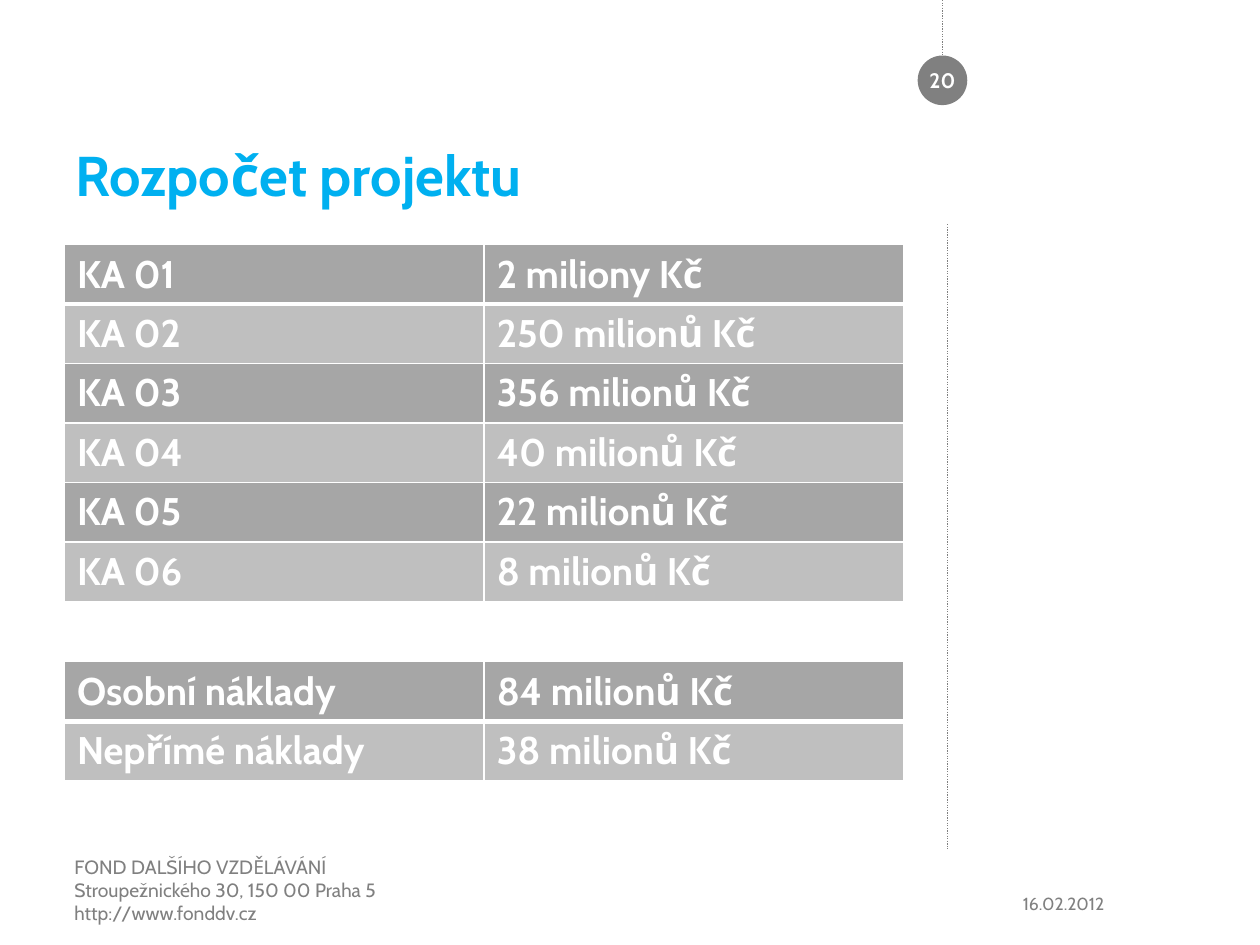
import pptx
import pptx.dml.color
import pptx.enum.dml
import pptx.enum.shapes
import pptx.enum.text
import pptx.oxml
import pptx.oxml.ns
import pptx.util
from pptx.util import Cm, Pt

FONT = "Cabin"
GREY, WHITE, BLUE = "808080", "FFFFFF", "00B0F0"
ROW_FILLS = ("A6A6A6", "BFBFBF")

TITLE = "Rozpočet projektu"
PAGE_NUMBER = "20"
DATE = "16.02.2012"
ADDRESS = [
    "FOND DALŠÍHO VZDĚLÁVÁNÍ",
    "Stroupežnického 30, 150 00 Praha 5",
    "http://www.fonddv.cz",
]
ACTIVITIES = [
    ("KA 01", "2 miliony Kč"),
    ("KA 02", "250 milionů Kč"),
    ("KA 03", "356 milionů Kč"),
    ("KA 04", "40 milionů Kč"),
    ("KA 05", "22 milionů Kč"),
    ("KA 06", "8 milionů Kč"),
]
OVERHEADS = [
    ("Osobní náklady", "84 milionů Kč"),
    ("Nepřímé náklady", "38 milionů Kč"),
]

TABLE_LEFT, COLUMN_WIDTH, ROW_HEIGHT = 1.3, 8.46, 1.2
BADGE_LEFT, BADGE_TOP, BADGE_SIZE = 18.5, 1.12, 1.0
MIDDLE = pptx.enum.text.MSO_ANCHOR.MIDDLE
BOTTOM = pptx.enum.text.MSO_ANCHOR.BOTTOM


def rgb(value):
    return pptx.dml.color.RGBColor.from_string(value)


def style(paragraph, size, color, bold=False):
    font = paragraph.font
    font.name, font.size, font.bold = FONT, Pt(size), bold
    font.color.rgb = rgb(color)


def add_text(slide, lines, box, size, color, bold=False, anchor=None):
    """Add a wrapped text box with one paragraph per line; box is in cm."""
    frame = slide.shapes.add_textbox(*map(Cm, box)).text_frame
    frame.word_wrap = True
    frame.vertical_anchor = anchor
    frame.text = "\n".join(lines)
    for paragraph in frame.paragraphs:
        style(paragraph, size, color, bold)


def add_dotted_line(slide, x, top, bottom):
    line = slide.shapes.add_connector(
        pptx.enum.shapes.MSO_CONNECTOR.STRAIGHT, Cm(x), Cm(top), Cm(x), Cm(bottom))
    line.line.color.rgb = rgb(GREY)
    line.line.width = Pt(0.75)
    line.line.dash_style = pptx.enum.dml.MSO_LINE.ROUND_DOT
    pptx.oxml.ns  # namespace helpers used below
    properties = line._element.spPr
    properties.append(pptx.oxml.parse_xml(
        f'<a:effectLst {pptx.oxml.ns.nsdecls("a")}/>'))


def add_borders(cell, top, bottom):
    """Draw white cell borders; top and bottom are widths in points."""
    for side, width in (("L", 1), ("R", 1), ("T", top), ("B", bottom)):
        cell._tc.get_or_add_tcPr().append(pptx.oxml.parse_xml(
            f'<a:ln{side} {pptx.oxml.ns.nsdecls("a")} w="{Pt(width)}"><a:solidFill>'
            f'<a:srgbClr val="{WHITE}"/></a:solidFill></a:ln{side}>'))


def add_budget(slide, rows, top):
    columns = len(rows[0])
    table = slide.shapes.add_table(
        len(rows), columns, Cm(TABLE_LEFT), Cm(top),
        Cm(COLUMN_WIDTH * columns), Cm(ROW_HEIGHT * len(rows))).table
    table.first_row = table.horz_banding = False
    for r, row in enumerate(rows):
        for c, text in enumerate(row):
            cell = table.cell(r, c)
            cell.text = text
            style(cell.text_frame.paragraphs[0], 22, WHITE, bold=True)
            add_borders(cell, top=3 if r == 1 else 1, bottom=3 if r == 0 else 1)
            cell.fill.solid()
            cell.fill.fore_color.rgb = rgb(ROW_FILLS[r % 2])


def add_page_badge(slide):
    badge = slide.shapes.add_shape(
        pptx.enum.shapes.MSO_SHAPE.OVAL,
        *map(Cm, (BADGE_LEFT, BADGE_TOP, BADGE_SIZE, BADGE_SIZE)))
    badge.shadow.inherit = False
    badge.fill.solid()
    badge.fill.fore_color.rgb = rgb(GREY)
    badge.line.fill.background()
    frame = badge.text_frame
    frame.margin_left = frame.margin_right = frame.margin_top = frame.margin_bottom = 0
    frame.word_wrap = False
    frame.vertical_anchor = MIDDLE
    frame.text = PAGE_NUMBER
    number = frame.paragraphs[0]
    number.alignment = pptx.enum.text.PP_ALIGN.CENTER
    style(number, 12, WHITE, bold=True)


def main():
    deck = pptx.Presentation()
    deck.slide_width, deck.slide_height = Cm(25.4), Cm(19.05)
    slide = deck.slides.add_slide(deck.slide_layouts[6])

    add_page_badge(slide)
    add_dotted_line(slide, BADGE_LEFT + BADGE_SIZE / 2, 0, BADGE_TOP)
    add_dotted_line(slide, 19.1, 4.52, 17.12)
    add_text(slide, [TITLE], (1.27, 0.7, 16.85, 3.62), 32, BLUE, True, BOTTOM)
    add_text(slide, [DATE], (20.37, 17.7, 4.8, 1.02), 10, GREY, anchor=MIDDLE)
    add_text(slide, ADDRESS, (1.25, 17.12, 8.05, 1.55), 11, GREY)
    add_budget(slide, ACTIVITIES, 4.93)
    add_budget(slide, OVERHEADS, 13.34)

    deck.save("out.pptx")


if __name__ == "__main__":
    main()
